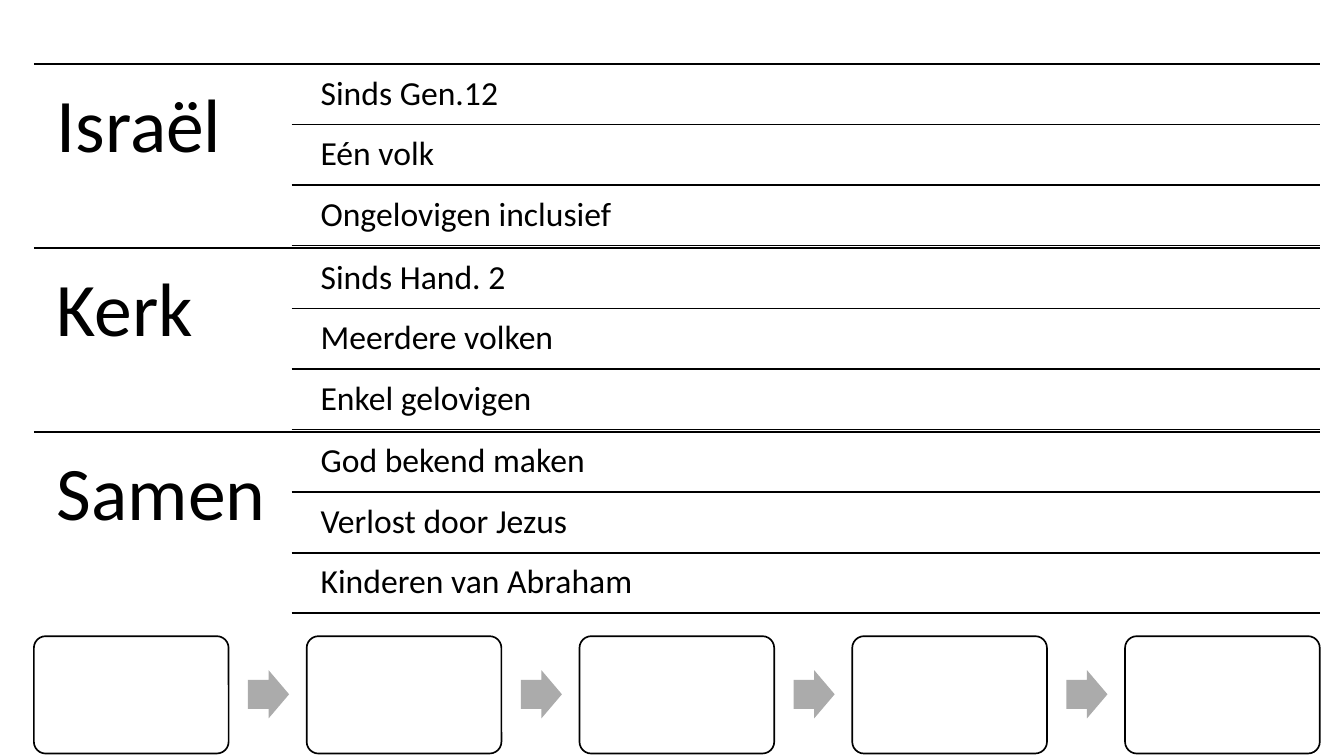
from pptx import Presentation
from pptx import util as u
from pptx.dml.color import RGBColor
from pptx.enum import shapes, text
from pptx.oxml.ns import qn
from lxml import etree

COLORS = {"ink": "000000", "paper": "FFFFFF", "arrow": "ABABAB"}
GROUPS = [
    ("Israël", ["Sinds Gen.12", "Eén volk", "Ongelovigen inclusief"]),
    ("Kerk", ["Sinds Hand. 2", "Meerdere volken", "Enkel gelovigen"]),
    ("Samen", ["God bekend maken", "Verlost door Jezus", "Kinderen van Abraham"]),
]
LEFT, MID, RIGHT = 0.28, 2.41, 10.91
TOP, BAND, ROW = 0.53, 1.52, 0.5
BOXES, PITCH = 5, 2.255


class Deck:
    """Hold the style and the current slide, and draw its elements."""

    def __init__(self, wide, high):
        self.prs = Presentation()
        self.prs.slide_width = u.Inches(wide)
        self.prs.slide_height = u.Inches(high)
        self.slide = self.prs.slides.add_slide(self.prs.slide_layouts[6])
        self.font = "Calibri"

    def color(self, name):
        return RGBColor.from_string(COLORS[name])

    def shape(self, kind, box, fill, adjust, line=None):
        item = self.slide.shapes.add_shape(kind, *map(u.Inches, box))
        item.shadow.inherit = False
        item.fill.solid()
        item.fill.fore_color.rgb = self.color(fill)
        for i, value in enumerate(adjust):
            item.adjustments[i] = value
        if line:
            item.line.color.rgb = self.color(line)
            item.line.width = u.Pt(1)
        else:
            item.line.fill.background()

    def rule(self, left, y):
        ends = map(u.Inches, (left, y, RIGHT, y))
        item = self.slide.shapes.add_connector(shapes.MSO_CONNECTOR.STRAIGHT, *ends)
        item.line.color.rgb = self.color("ink")
        item.line.width = u.Pt(1)
        etree.SubElement(item._element.spPr, qn("a:effectLst"))

    def label(self, words, box, size, inset):
        frame = self.slide.shapes.add_textbox(*map(u.Inches, box)).text_frame
        frame.word_wrap = True
        frame.vertical_anchor = text.MSO_ANCHOR.TOP
        frame.margin_left = frame.margin_right = u.Inches(inset)
        frame.margin_top = frame.margin_bottom = u.Inches(inset)
        para = frame.paragraphs[0]
        para.text = words
        para.line_spacing = 0.9
        para.font.name = self.font
        para.font.size = u.Pt(size)
        para.font.color.rgb = self.color("ink")


def main():
    deck = Deck(11.11, 6.25)
    for i in range(BOXES):
        x = LEFT + i * PITCH
        deck.shape(shapes.MSO_SHAPE.ROUNDED_RECTANGLE, (x, 5.26, 1.61, 0.97),
                   "paper", [0.1], "ink")
        if i < BOXES - 1:
            deck.shape(shapes.MSO_SHAPE.RIGHT_ARROW, (x + 1.77, 5.54, 0.34, 0.4),
                       "arrow", [0.6, 0.5])
    for i, (title, points) in enumerate(GROUPS):
        y = TOP + i * BAND
        deck.rule(LEFT, y)
        deck.label(title, (LEFT, y, MID - LEFT, BAND), 45, 0.19)
        for j, point in enumerate(points):
            top = y + j * ROW
            deck.label(point, (2.57, top + 0.02, 8.35, 0.48), 20, 0.08)
            deck.rule(MID, top + ROW)
    deck.prs.save("out.pptx")


if __name__ == "__main__":
    main()
